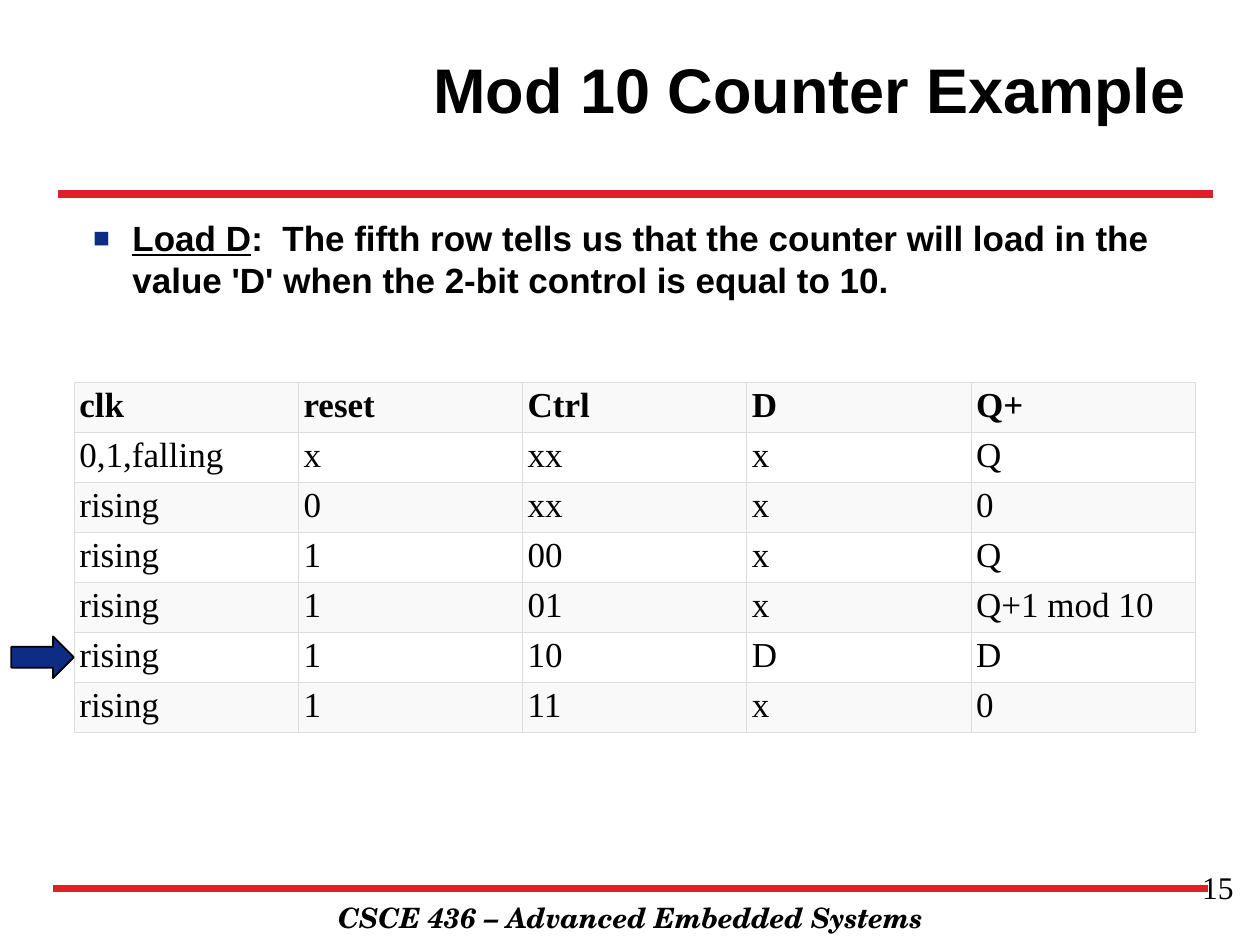
from lxml.etree import SubElement
from pptx import Presentation
from pptx.dml.color import RGBColor
from pptx.enum.shapes import MSO_CONNECTOR, MSO_SHAPE
from pptx.enum.text import MSO_ANCHOR, PP_ALIGN
from pptx.oxml.ns import qn
from pptx.util import Cm, Pt

COLORS = {
    "text": "000000", "rule": "DD212B", "accent": "0C2D83",
    "grid": "DDDDDD", "shaded": "F9F9F9", "plain": "FFFFFF",
}
TITLE = "Mod 10 Counter Example"
POINT = [
    ("Load D", True),
    (":  The fifth row tells us that the counter will load in the value 'D' "
     "when the 2-bit control is equal to 10.", False),
]
COURSE = "CSCE 436 – Advanced Embedded Systems"
PAGE = "15"
TRUTH_TABLE = [
    ("clk", "reset", "Ctrl", "D", "Q+"),
    ("0,1,falling", "x", "xx", "x", "Q"),
    ("rising", "0", "xx", "x", "0"),
    ("rising", "1", "00", "x", "Q"),
    ("rising", "1", "01", "x", "Q+1 mod 10"),
    ("rising", "1", "10", "D", "D"),
    ("rising", "1", "11", "x", "0"),
]
RULES = [(1.17, 3.91), (1.07, 17.91)]
RULE_WIDTH = 23.28
COLUMN_WIDTH, ROW_HEIGHT = 4.52, 0.94

FONTS = {
    "title": {"name": "Arial", "size": Pt(36), "bold": True},
    "point": {"name": "Arial", "size": Pt(20), "bold": True},
    "course": {"name": "TeX Gyre Schola", "size": Pt(16), "bold": True, "italic": True},
    "page": {"name": "Times New Roman", "size": Pt(18)},
    "header": {"name": "Times New Roman", "size": Pt(20), "bold": True},
    "entry": {"name": "Times New Roman", "size": Pt(20), "bold": False},
}
CELL_MARGINS = {
    "margin_left": Cm(0.1), "margin_right": Cm(0.1),
    "margin_top": Cm(0.08), "margin_bottom": Cm(0.08),
}


def color(name):
    return RGBColor.from_string(COLORS[name])


def apply(target, values):
    for key, value in values.items():
        setattr(target, key, value)


def add_run(paragraph, words, style, underline=False):
    run = paragraph.add_run()
    run.text = words
    apply(run.font, {**FONTS[style], "underline": underline})
    run.font.color.rgb = color("text")


def add_box(slide, place, align, anchor=MSO_ANCHOR.TOP):
    frame = slide.shapes.add_textbox(*map(Cm, place)).text_frame
    apply(frame, {"word_wrap": True, "vertical_anchor": anchor})
    paragraph = frame.paragraphs[0]
    paragraph.alignment = align
    return paragraph


def add_rule(slide, left, top):
    rule = slide.shapes.add_connector(
        MSO_CONNECTOR.STRAIGHT, Cm(left), Cm(top), Cm(left + RULE_WIDTH), Cm(top))
    rule.line.color.rgb = color("rule")
    rule.line.width = Pt(4.5)
    SubElement(rule._element.spPr, qn("a:effectLst"))


def add_bullet(paragraph):
    properties = paragraph._p.get_or_add_pPr()
    properties.set("marL", str(Cm(0.79)))
    properties.set("indent", str(-Cm(0.79)))
    tint = SubElement(properties, qn("a:buClr"))
    SubElement(tint, qn("a:srgbClr"), val=COLORS["accent"])
    SubElement(properties, qn("a:buSzPct"), val="80000")
    SubElement(properties, qn("a:buFont"), typeface="Arial")
    SubElement(properties, qn("a:buChar"), char="■")


def add_borders(cell):
    properties = cell._tc.get_or_add_tcPr()
    for side in ("lnL", "lnR", "lnT", "lnB"):
        border = SubElement(properties, qn(f"a:{side}"), w=str(Pt(0.75)))
        fill = SubElement(border, qn("a:solidFill"))
        SubElement(fill, qn("a:srgbClr"), val=COLORS["grid"])


def add_truth_table(slide, left, top):
    rows, columns = len(TRUTH_TABLE), len(TRUTH_TABLE[0])
    table = slide.shapes.add_table(
        rows, columns, Cm(left), Cm(top),
        Cm(COLUMN_WIDTH * columns), Cm(ROW_HEIGHT * rows)).table
    for r, entries in enumerate(TRUTH_TABLE):
        for c, entry in enumerate(entries):
            cell = table.cell(r, c)
            add_borders(cell)
            cell.fill.solid()
            cell.fill.fore_color.rgb = color("plain" if r % 2 else "shaded")
            apply(cell, CELL_MARGINS)
            add_run(cell.text_frame.paragraphs[0], entry, "entry" if r else "header")


def add_row_arrow(slide, place):
    arrow = slide.shapes.add_shape(MSO_SHAPE.RIGHT_ARROW, *map(Cm, place))
    arrow.shadow.inherit = False
    arrow.fill.solid()
    arrow.fill.fore_color.rgb = color("accent")
    arrow.line.color.rgb = color("text")
    arrow.line.width = Pt(1)


def main():
    deck = Presentation()
    apply(deck, {"slide_width": Cm(25.4), "slide_height": Cm(19.05)})
    slide = deck.slides.add_slide(deck.slide_layouts[6])

    course = add_box(slide, (3.61, 18.03, 18.21, 0.94), PP_ALIGN.CENTER)
    add_run(course, COURSE, "course")
    for left, top in RULES:
        add_rule(slide, left, top)
    title = add_box(slide, (5.31, 0.2, 18.85, 3.18), PP_ALIGN.RIGHT, MSO_ANCHOR.MIDDLE)
    add_run(title, TITLE, "title")
    point = add_box(slide, (1.63, 4.24, 22.58, 12.01), PP_ALIGN.LEFT)
    add_bullet(point)
    for words, underline in POINT:
        add_run(point, words, "point", underline)
    page = add_box(slide, (19.2, 17.37, 5.92, 1.32), PP_ALIGN.RIGHT)
    add_run(page, PAGE, "page")
    add_truth_table(slide, 1.5, 7.71)
    add_row_arrow(slide, (0.23, 12.83, 1.26, 0.84))

    deck.save("out.pptx")


if __name__ == "__main__":
    main()
